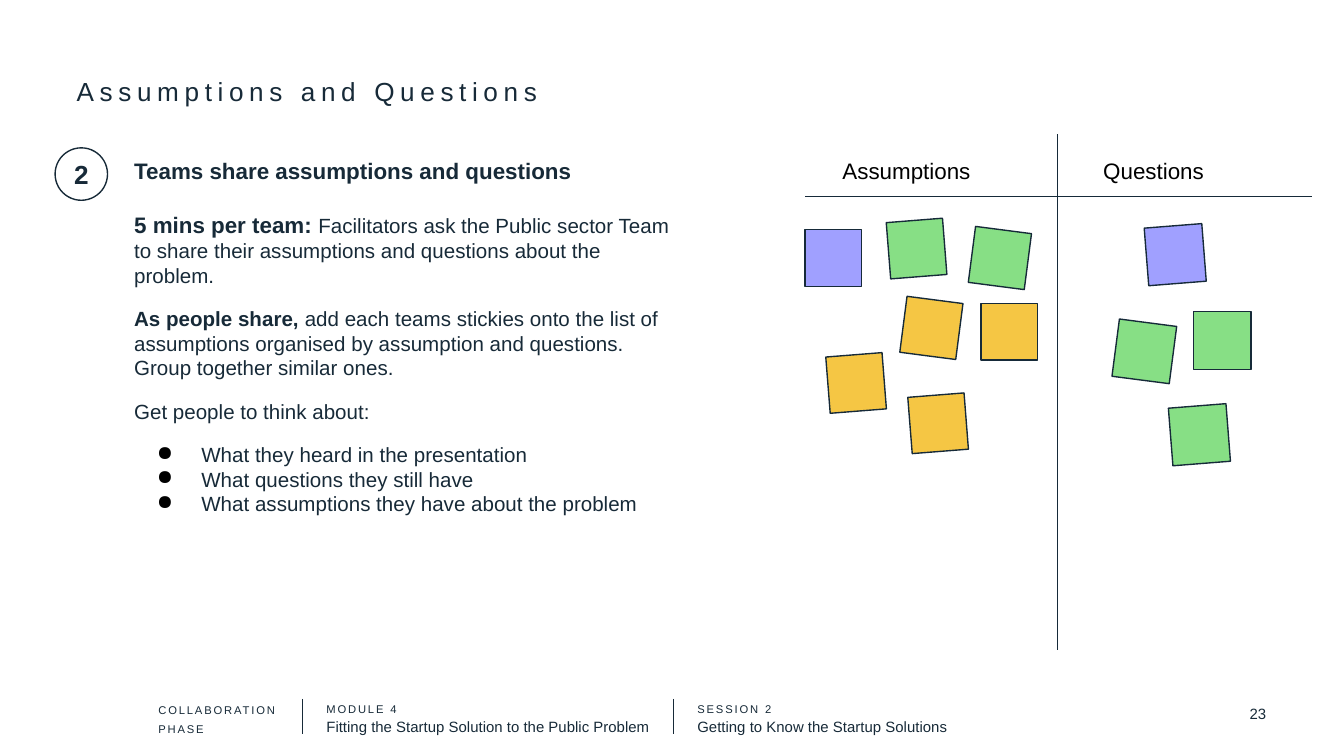
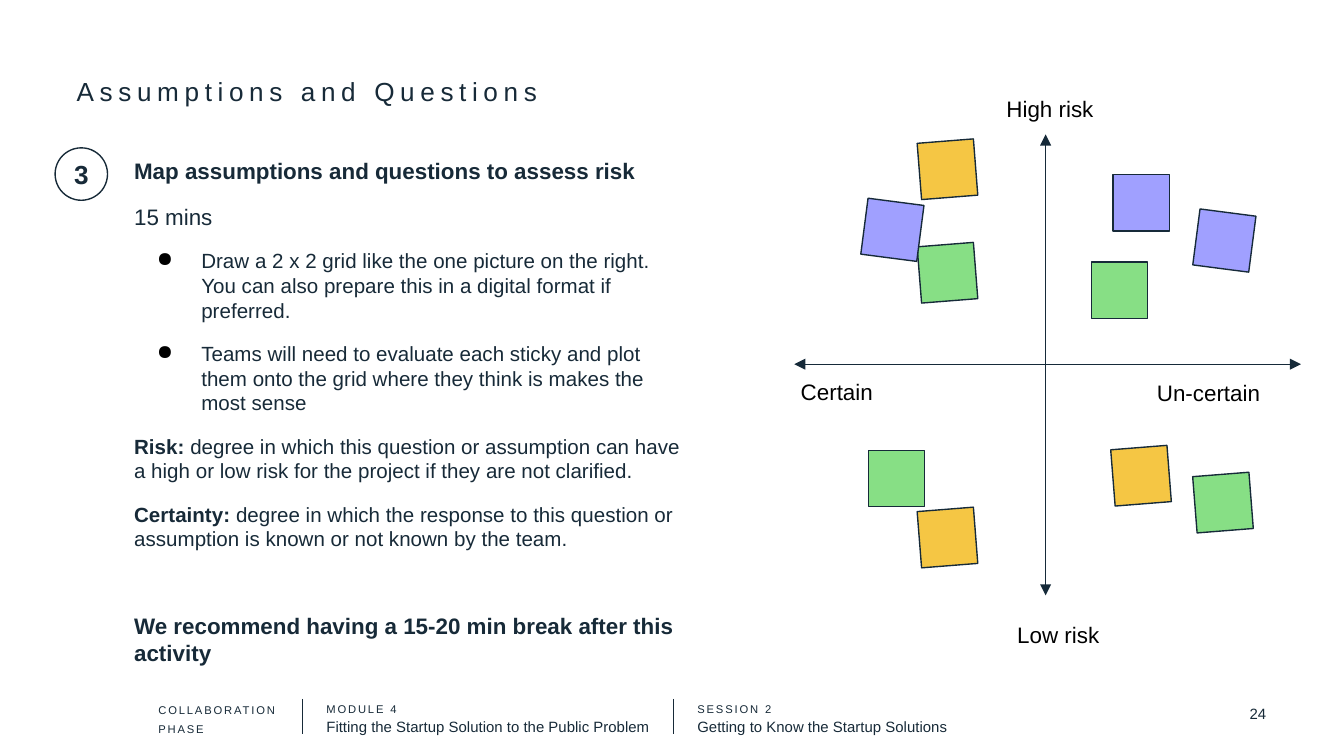
from dataclasses import dataclass

from lxml import etree
from pptx import Presentation
from pptx.dml.color import RGBColor
from pptx.enum.shapes import MSO_CONNECTOR, MSO_SHAPE
from pptx.enum.text import MSO_ANCHOR, MSO_AUTO_SIZE, PP_ALIGN
from pptx.oxml.ns import qn
from pptx.util import Inches, Pt

STRAIGHT = MSO_CONNECTOR.STRAIGHT
SQUARE, CIRCLE = MSO_SHAPE.RECTANGLE, MSO_SHAPE.OVAL
TOP, MIDDLE = MSO_ANCHOR.TOP, MSO_ANCHOR.MIDDLE
LEFT, CENTER, RIGHT = PP_ALIGN.LEFT, PP_ALIGN.CENTER, PP_ALIGN.RIGHT
NO_FIT = MSO_AUTO_SIZE.NONE

# Grid: 100 columns by 56.25 rows of square cells
WIDTH, HEIGHT = Inches(10), Inches(5.625)
CELL = WIDTH / 100

FONT = "Arial"
INK, RULE, BLACK = "172A38", "162A39", "000000"
VIOLET, GREEN, YELLOW = "A0A0FF", "87DF85", "F5C644"
TILT_LEFT, TILT_RIGHT = -4.5, 7.4
GAP = 10


@dataclass(frozen=True)
class Run:
    text: str
    bold: bool = False
    size: float | None = None
    tracking: float = 0


@dataclass(frozen=True)
class Para:
    runs: tuple[Run, ...]
    before: float = 0
    bullet: bool = False


@dataclass(frozen=True)
class Box:
    left: float
    top: float
    width: float
    height: float


@dataclass(frozen=True)
class Line:
    start: tuple[float, float]
    end: tuple[float, float]


@dataclass(frozen=True)
class Label:
    text: str
    box: Box


@dataclass(frozen=True)
class Note:
    left: float
    top: float
    color: str
    tilt: float = 0
    side: float = 4.2


@dataclass(frozen=True)
class Activity:
    page: int
    step: int
    title_height: float
    body_width: float
    body: tuple[Para, ...]
    axes: tuple[Line, Line]
    arrows: bool
    labels: tuple[Label, ...]
    notes: tuple[Note, ...]


def para(*runs: Run | str, before: float = 0, bullet: bool = False) -> Para:
    return Para(tuple(Run(r) if isinstance(r, str) else r for r in runs), before, bullet)


def cells(*counts: float) -> list[int]:
    return [round(count * CELL) for count in counts]


def place(box: Box) -> list[int]:
    return cells(box.left, box.top, box.width, box.height)


def rgb(color: str) -> RGBColor:
    return RGBColor.from_string(color)


def add_bullet(paragraph) -> None:
    props = paragraph._p.get_or_add_pPr()
    props.set("marL", str(Inches(0.5)))
    props.set("indent", str(Inches(-0.33)))
    tint = etree.SubElement(props, qn("a:buClr"))
    etree.SubElement(tint, qn("a:srgbClr"), val=BLACK)
    etree.SubElement(props, qn("a:buChar"), char="●")


def write(frame, paragraphs, *, size=11.0, color=INK, align=LEFT,
          anchor=TOP, inset=1.0, leading=None) -> None:
    """Fill a text frame; a run's own size wins over the common one."""
    frame.word_wrap, frame.auto_size, frame.vertical_anchor = True, NO_FIT, anchor
    frame.margin_left = frame.margin_right = cells(inset)[0]
    frame.margin_top = frame.margin_bottom = cells(inset)[0]
    for index, content in enumerate(paragraphs):
        paragraph = frame.add_paragraph() if index else frame.paragraphs[0]
        if content.bullet:
            add_bullet(paragraph)
        paragraph.alignment = align
        paragraph.space_before = Pt(content.before)
        if leading:
            paragraph.line_spacing = Pt(leading)
        for part in content.runs:
            run = paragraph.add_run()
            run.text = part.text
            run.font.name, run.font.bold = FONT, part.bold
            run.font.size = Pt(part.size or size)
            run.font.color.rgb = rgb(color)
            if part.tracking:
                run.font._element.set("spc", str(round(part.tracking * 100)))


def add_text(slide, box: Box, *paragraphs: Para, **text_format) -> None:
    write(slide.shapes.add_textbox(*place(box)).text_frame, paragraphs, **text_format)


def add_line(slide, line: Line, *, color=RULE, weight=0.75, arrows=False) -> None:
    connector = slide.shapes.add_connector(STRAIGHT, *cells(*line.start, *line.end))
    connector.line.color.rgb = rgb(color)
    connector.line.width = Pt(weight)
    props = connector.element.spPr
    if arrows:
        for end in ("a:headEnd", "a:tailEnd"):
            etree.SubElement(props.find(qn("a:ln")), qn(end), type="triangle")
    etree.SubElement(props, qn("a:effectLst"))


def add_outlined(slide, kind, box: Box, *, fill=None, color=RULE):
    shape = slide.shapes.add_shape(kind, *place(box))
    shape.shadow.inherit = False
    if fill:
        shape.fill.solid()
        shape.fill.fore_color.rgb = rgb(fill)
    else:
        shape.fill.background()
    shape.line.color.rgb = rgb(color)
    shape.line.width = Pt(0.75)
    return shape


def add_note(slide, note: Note) -> None:
    box = Box(note.left, note.top, note.side, note.side)
    add_outlined(slide, SQUARE, box, fill=note.color).rotation = note.tilt


def caption(text: str) -> Para:
    return para(Run(text, size=6, tracking=1))


def add_footer(slide, page: int) -> None:
    add_text(slide, Box(10.8, 50.9, 11.5, 4.7), caption("COLLABORATION"),
             caption("PHASE"), leading=10.2)
    for left, width, heading, name in (
        (23.3, 33.2, "MODULE 4", "Fitting the Startup Solution to the Public Problem"),
        (50.9, 29.9, "SESSION 2", "Getting to Know the Startup Solutions"),
    ):
        divider = left - 0.8
        add_line(slide, Line((divider, 52), (divider, 54.6)), color=INK, weight=0.5)
        add_text(slide, Box(left, 50.8, width, 4.7), caption(heading), para(name),
                 size=8, leading=10.6)
    add_text(slide, Box(84.9, 51.6, 10.3, 3), para(str(page)),
             size=8, align=RIGHT, anchor=MIDDLE)


def build_activity(deck, activity: Activity) -> None:
    slide = deck.slides.add_slide(deck.slide_layouts.get_by_name("Title Only"))
    add_footer(slide, activity.page)

    # Title, step number and instructions
    title = slide.shapes.title
    title.left, title.top, title.width, title.height = place(
        Box(4.7, 4.6, 90.6, activity.title_height))
    write(title.text_frame, [para(Run("Assumptions and Questions", tracking=3))], size=14)
    add_text(slide, Box(9, 10.7, activity.body_width, 38.4), *activity.body)
    step = add_outlined(slide, CIRCLE, Box(4.1, 11, 3.9, 3.9), color=INK)
    write(step.text_frame, [para(Run(str(activity.step), bold=True))],
          size=14, align=CENTER, anchor=MIDDLE, inset=0.6)

    # Board with sticky notes
    for axis in activity.axes:
        add_line(slide, axis, arrows=activity.arrows)
    for label in activity.labels:
        add_text(slide, label.box, para(label.text), size=12, color=BLACK)
    for note in activity.notes:
        add_note(slide, note)


SHARING = Activity(
    page=23, step=2, title_height=7.7, body_width=42.7,
    body=(
        para(Run("Teams share assumptions and questions", True, 12)),
        para(Run("5 mins per team: ", True, 12),
             "Facilitators ask the Public sector Team to share their assumptions "
             "and questions about the problem.", before=14.5),
        para(Run("As people share, ", True),
             "add each teams stickies onto the list of assumptions organised by "
             "assumption and questions. Group together similar ones.", before=GAP),
        para("Get people to think about:", before=GAP),
        para("What they heard in the presentation", before=GAP, bullet=True),
        para("What questions they still have", bullet=True),
        para("What assumptions they have about the problem", bullet=True),
    ),
    axes=(Line((59.9, 14.6), (97.6, 14.6)), Line((78.7, 10), (78.7, 48.4))),
    arrows=False,
    labels=(
        Label("Assumptions", Box(61.7, 10.7, 14.5, 3.9)),
        Label("Questions", Box(81.1, 10.7, 14.5, 3.9)),
    ),
    notes=(
        Note(59.9, 17.1, VIOLET),
        Note(66.1, 16.4, GREEN, TILT_LEFT),
        Note(72.3, 17.1, GREEN, TILT_RIGHT),
        Note(67.2, 22.3, YELLOW, TILT_RIGHT),
        Note(61.6, 26.4, YELLOW, TILT_LEFT),
        Note(73, 22.6, YELLOW),
        Note(67.7, 29.4, YELLOW, TILT_LEFT),
        Note(87.1, 30.2, GREEN, TILT_LEFT, 4.3),
        Note(88.8, 23.2, GREEN, side=4.3),
        Note(85.3, 16.8, VIOLET, TILT_LEFT, 4.3),
        Note(83, 24, GREEN, TILT_RIGHT, 4.3),
    ),
)

MAPPING = Activity(
    page=24, step=3, title_height=3.2, body_width=43.3,
    body=(
        para(Run("Map assumptions and questions to assess risk", True, 12)),
        para(Run("15 mins", size=12), before=GAP),
        para("Draw a 2 x 2 grid like the one picture on the right. You can also "
             "prepare this in a digital format if preferred.", before=GAP, bullet=True),
        para("Teams will need to evaluate each sticky and plot them onto the grid "
             "where they think is makes the most sense", before=GAP, bullet=True),
        para(Run("Risk: ", True),
             "degree in which this question or assumption can have a high or low "
             "risk for the project if they are not clarified.", before=GAP),
        para(Run("Certainty: ", True),
             "degree in which the response to this question or assumption is known "
             "or not known by the team.", before=GAP),
        para(Run("We recommend having a 15-20 min break after this activity", True, 12),
             before=33),
    ),
    axes=(Line((59.1, 27.1), (96.8, 27.1)), Line((77.8, 10), (77.8, 44.3))),
    arrows=True,
    labels=(
        Label("Certain", Box(58.6, 27.1, 9.7, 3.9)),
        Label("High risk", Box(73.9, 6.1, 14.5, 3.9)),
        Label("Low risk", Box(74.7, 45.2, 14.5, 3.9)),
        Label("Un-certain", Box(85.1, 27.2, 11, 3.9)),
    ),
    notes=(
        Note(82.8, 13, VIOLET),
        Note(68.4, 18.2, GREEN, TILT_LEFT),
        Note(64.3, 15, VIOLET, TILT_RIGHT),
        Note(89, 15.8, VIOLET, TILT_RIGHT),
        Note(82.8, 33.3, YELLOW, TILT_LEFT),
        Note(81.2, 19.5, GREEN),
        Note(88.9, 35.3, GREEN, TILT_LEFT),
        Note(64.6, 33.5, GREEN),
        Note(68.4, 37.9, YELLOW, TILT_LEFT),
        Note(68.4, 10.5, YELLOW, TILT_LEFT),
    ),
)


def main() -> None:
    deck = Presentation()
    deck.slide_width, deck.slide_height = WIDTH, HEIGHT
    for activity in (SHARING, MAPPING):
        build_activity(deck, activity)
    deck.save("out.pptx")


if __name__ == "__main__":
    main()
